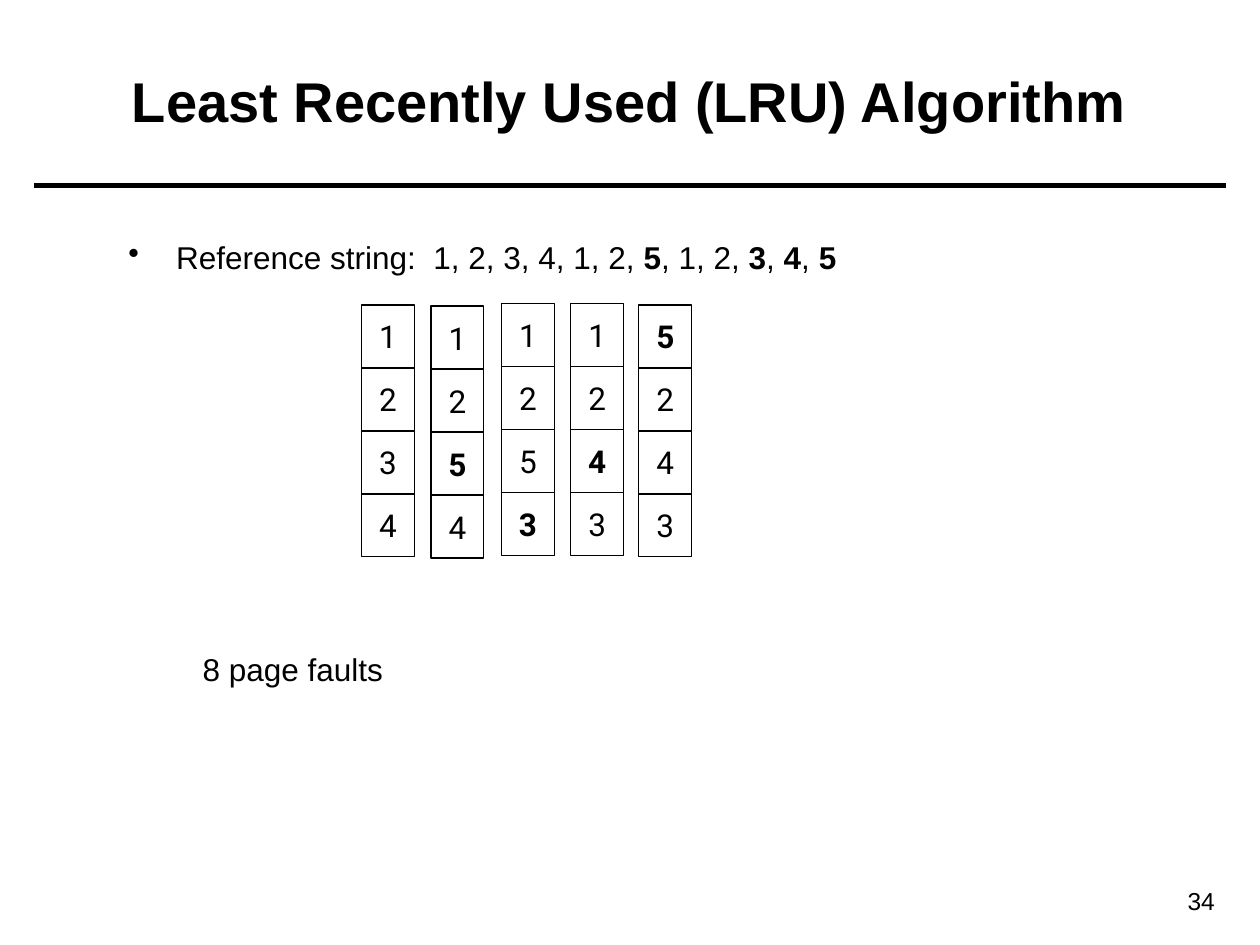
from lxml import etree
from pptx import Presentation
from pptx.dml.color import RGBColor
from pptx.enum.shapes import MSO_CONNECTOR, MSO_SHAPE
from pptx.enum.text import MSO_ANCHOR, PP_ALIGN
from pptx.oxml.ns import qn
from pptx.util import Inches, Pt

STRAIGHT = MSO_CONNECTOR.STRAIGHT
RECTANGLE = MSO_SHAPE.RECTANGLE
MIDDLE = MSO_ANCHOR.MIDDLE
LEFT, CENTER, RIGHT = PP_ALIGN.LEFT, PP_ALIGN.CENTER, PP_ALIGN.RIGHT
COLORS = {"ink": "000000", "paper": "FFFFFF"}
INK = RGBColor.from_string(COLORS["ink"])
PAPER = RGBColor.from_string(COLORS["paper"])


def format_paragraph(paragraph, size, alignment, name="Arial", bold=False):
    paragraph.alignment = alignment
    font = paragraph.font
    font.name, font.size, font.bold = name, Pt(size), bold
    font.color.rgb = INK


def add_text(left, top, width, height, text, size, alignment, wrap=True):
    box = slide.shapes.add_textbox(Inches(left), Inches(top), Inches(width), Inches(height))
    box.text_frame.word_wrap = wrap
    paragraph = box.text_frame.paragraphs[0]
    paragraph.text = text
    format_paragraph(paragraph, size, alignment)
    return paragraph


presentation = Presentation()
presentation.slide_width, presentation.slide_height = Inches(10), Inches(7.5)
slide = presentation.slides.add_slide(presentation.slide_layouts[5])

# Title
title = slide.shapes.title
title.left, title.top = Inches(0.35), Inches(0.17)
title.width, title.height = Inches(9.29), Inches(1.25)
title.text_frame.text = "Least Recently Used (LRU) Algorithm"
title.text_frame.vertical_anchor = MIDDLE
format_paragraph(title.text_frame.paragraphs[0], 32, CENTER, bold=True)

# Rule under the title
rule = slide.shapes.add_connector(STRAIGHT, Inches(0.27), Inches(1.47), Inches(9.73), Inches(1.47))
rule.line.color.rgb = INK
rule.line.width = Pt(3)
etree.SubElement(rule._element.spPr, qn("a:effectLst"))

# Page number
add_text(8.7, 6.98, 1.04, 0.34, "34", 14, RIGHT)

# Reference string, with later faults in bold
reference = add_text(0.92, 1.84, 8.04, 4.9, "", 18, LEFT)
reference.space_before = Pt(3.6)
for text, bold in [
    ("Reference string:  1, 2, 3, 4, 1, 2, ", False), ("5", True), (", 1, 2, ", False),
    ("3", True), (", ", False), ("4", True), (", ", False), ("5", True),
]:
    run = reference.add_run()
    run.text = text
    run.font.bold = bold
properties = reference._p.get_or_add_pPr()
properties.set("marL", str(Inches(0.38)))
properties.set("indent", str(-Inches(0.38)))
bullet = etree.Element(qn("a:buChar"), char="•")
properties.find(qn("a:defRPr")).addprevious(bullet)

# Frame contents over time: left, top, pages, row of the newly loaded page
FRAME_WIDTH, FRAME_HEIGHT = 0.42, 0.5
frame_columns = [
    (2.87, 2.42, "1234", None),
    (3.42, 2.43, "1254", 2),
    (3.98, 2.41, "1253", 3),
    (4.53, 2.41, "1243", 2),
    (5.07, 2.42, "5243", 0),
]
for left, top, pages, loaded_row in frame_columns:
    for row, page in enumerate(pages):
        frame = slide.shapes.add_shape(
            RECTANGLE, Inches(left), Inches(top + row * FRAME_HEIGHT),
            Inches(FRAME_WIDTH), Inches(FRAME_HEIGHT))
        frame.shadow.inherit = False
        frame.fill.solid()
        frame.fill.fore_color.rgb = PAPER
        frame.line.color.rgb = INK
        frame.line.width = Pt(0.75)
        frame.text_frame.word_wrap = False
        frame.text_frame.vertical_anchor = MIDDLE
        paragraph = frame.text_frame.paragraphs[0]
        paragraph.text = page
        format_paragraph(paragraph, 18, CENTER, "Roboto", row == loaded_row)

# Fault count
add_text(1.51, 5.11, 1.63, 0.4, "8 page faults", 18, CENTER, wrap=False)

presentation.save("out.pptx")
